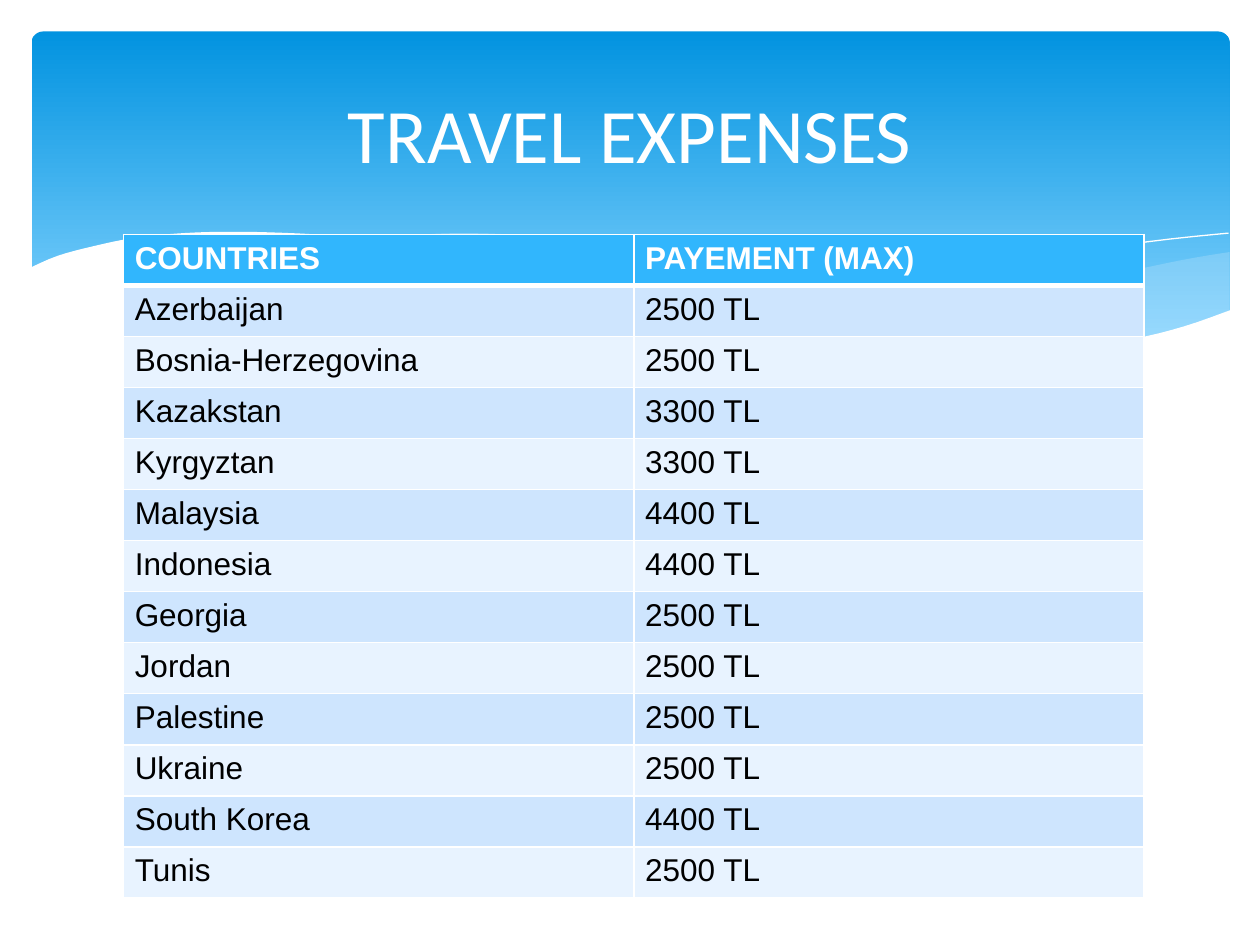
from dataclasses import dataclass
from typing import Optional

from lxml.etree import SubElement
from pptx import Presentation
from pptx.dml.color import RGBColor
from pptx.enum.shapes import MSO_SHAPE as Shape
from pptx.enum.text import MSO_ANCHOR as Anchor, PP_ALIGN as Align
from pptx.oxml.ns import qn
from pptx.util import Pt

PX = 9144
WHITE = "FFFFFF"
BLACK = "000000"
HEADER = "31B6FD"
BANDS = ("CEE5FE", "E8F3FF")
MIST = "C6E7FC"
STEPS = 4

Point = tuple[float, float]


@dataclass(frozen=True)
class Wave:
    """A outline of smooth edges; filled when it has a fill, else a hairline."""
    edges: list[list[Point]]
    fill: Optional[str] = None
    opacity: int = 100


WAVES = [
    Wave([[(976, 200), (935, 207), (861, 223), (779, 242), (706, 257), (661, 265)],
          [(661, 265), (705, 271), (757, 276), (803, 278), (854, 276), (897, 270),
           (935, 262), (976, 247)]], MIST, 29),
    Wave([[(893, 273), (837, 265), (741, 247), (629, 222), (555, 205), (489, 194),
           (420, 187), (361, 185), (313, 188), (286, 191)],
          [(286, 191), (342, 199), (404, 211), (449, 222), (530, 240), (618, 258),
           (695, 270), (761, 277), (818, 278), (857, 277), (893, 273)]], MIST, 40),
    Wave([[(309, 195), (344, 190), (401, 187), (469, 189), (533, 194), (608, 204),
           (695, 219), (795, 241), (869, 261), (907, 272)]]),
    Wave([[(613, 257), (672, 241), (748, 223), (836, 204), (910, 192), (975, 185)]]),
    Wave([[(977, 246), (940, 259), (899, 269), (850, 275), (809, 277), (744, 274),
           (668, 265), (579, 250), (503, 233), (447, 220), (391, 207), (340, 197),
           (292, 190), (250, 186), (193, 184), (146, 185), (106, 189), (76, 195),
           (46, 203), (23, 213)],
          [(23, 213), (23, 329)], [(23, 329), (977, 329)]], WHITE),
]

ROWS = [
    ("COUNTRIES", "PAYEMENT (MAX)"),
    ("Azerbaijan", "2500 TL"),
    ("Bosnia-Herzegovina", "2500 TL"),
    ("Kazakstan", "3300 TL"),
    ("Kyrgyztan", "3300 TL"),
    ("Malaysia", "4400 TL"),
    ("Indonesia", "4400 TL"),
    ("Georgia", "2500 TL"),
    ("Jordan", "2500 TL"),
    ("Palestine", "2500 TL"),
    ("Ukraine", "2500 TL"),
    ("South Korea", "4400 TL"),
    ("Tunis", "2500 TL"),
]


def color(value: str) -> RGBColor:
    """Turn a hex string into a colour."""
    return RGBColor.from_string(value)


def box(*lengths: int) -> list[int]:
    """Turn px lengths into EMU."""
    return [length * PX for length in lengths]


def smooth(knots: list[Point]) -> list[Point]:
    """Return a Catmull-Rom curve through the knots."""
    padded = [knots[0], *knots, knots[-1]]
    curve = [knots[0]]
    for a, b, c, d in zip(padded, padded[1:], padded[2:], padded[3:]):
        for step in range(1, STEPS + 1):
            t = step / STEPS
            curve.append(tuple(
                (2 * q + (r - p) * t + (2 * p - 5 * q + 4 * r - s) * t ** 2
                 + (3 * q - p - 3 * r + s) * t ** 3) / 2
                for p, q, r, s in zip(a, b, c, d)))
    return curve


def style_text(frame, font: str, size: int, ink: str, bold: bool = False) -> None:
    """Format every run of a text frame."""
    for para in frame.paragraphs:
        for span in para.runs:
            span.font.name = font
            span.font.size = Pt(size)
            span.font.bold = bold
            span.font.color.rgb = color(ink)


def draw_banner(page) -> None:
    """Draw the rounded gradient panel."""
    panel = page.shapes.add_shape(Shape.ROUNDED_RECTANGLE, *box(25, 25, 951, 270))
    panel.adjustments[0] = 0.034
    panel.shadow.inherit = False
    panel.line.fill.background()
    panel.fill.gradient()
    panel.fill.gradient_angle = 270
    stops = ((0, "0293E0"), (0.9, "83D3FE"))
    for stop, (position, value) in zip(panel.fill.gradient_stops, stops):
        stop.position = position
        stop.color.rgb = color(value)


def draw_wave(page, wave: Wave) -> None:
    """Draw one wave as a filled shape or an open hairline."""
    points = [(x * PX, y * PX) for edge in wave.edges for x, y in smooth(edge)]
    builder = page.shapes.build_freeform(*points[0], scale=1.0)
    builder.add_line_segments(points[1:], close=wave.fill is not None)
    shape = builder.convert_to_shape()
    shape.shadow.inherit = False
    if wave.fill is None:
        shape.fill.background()
        shape.line.color.rgb = color(WHITE)
        shape.line.width = Pt(0)
        return
    shape.line.fill.background()
    shape.fill.solid()
    shape.fill.fore_color.rgb = color(wave.fill)
    if wave.opacity < 100:
        tint = shape.element.spPr.find(qn("a:solidFill"))[0]
        SubElement(tint, qn("a:alpha")).set("val", str(wave.opacity * 1000))


def draw_borders(cell, top: int, bottom: int) -> None:
    """Give a cell white borders, with top and bottom widths in points."""
    properties = cell._tc.get_or_add_tcPr()
    for side, width in (("L", 1), ("R", 1), ("T", top), ("B", bottom)):
        border = SubElement(properties, qn(f"a:ln{side}"), w=str(Pt(width)))
        SubElement(SubElement(border, qn("a:solidFill")), qn("a:srgbClr"), val=WHITE)


def draw_table(page) -> None:
    """Draw the table of countries and payments."""
    table = page.shapes.add_table(len(ROWS), 2, *box(98, 186, 810, 527)).table
    for row, texts in enumerate(ROWS):
        header = row == 0
        for column, text in enumerate(texts):
            cell = table.cell(row, column)
            draw_borders(cell, 3 if row == 1 else 1, 3 if header else 1)
            cell.fill.solid()
            cell.fill.fore_color.rgb = color(HEADER if header else BANDS[(row - 1) % 2])
            cell.margin_left, cell.margin_top, cell.margin_right, cell.margin_bottom = box(9, 5, 9, 5)
            cell.text_frame.text = text
            style_text(cell.text_frame, "Arial", 18, WHITE if header else BLACK, header)


def place_title(page) -> None:
    """Fill the title placeholder and bring it to the front."""
    title = page.shapes.title
    title.left, title.top, title.width, title.height = box(50, 37, 900, 137)
    title.text_frame.text = "TRAVEL EXPENSES"
    title.text_frame.vertical_anchor = Anchor.MIDDLE
    title.text_frame.paragraphs[0].alignment = Align.CENTER
    style_text(title.text_frame, "Calibri", 44, WHITE)
    title.element.getparent().append(title.element)


def main() -> None:
    """Build the slide and save it."""
    deck = Presentation()
    deck.slide_width, deck.slide_height = box(1000, 750)
    page = deck.slides.add_slide(deck.slide_layouts[5])
    draw_banner(page)
    for wave in WAVES:
        draw_wave(page, wave)
    draw_table(page)
    place_title(page)
    deck.save("out.pptx")


if __name__ == "__main__":
    main()
